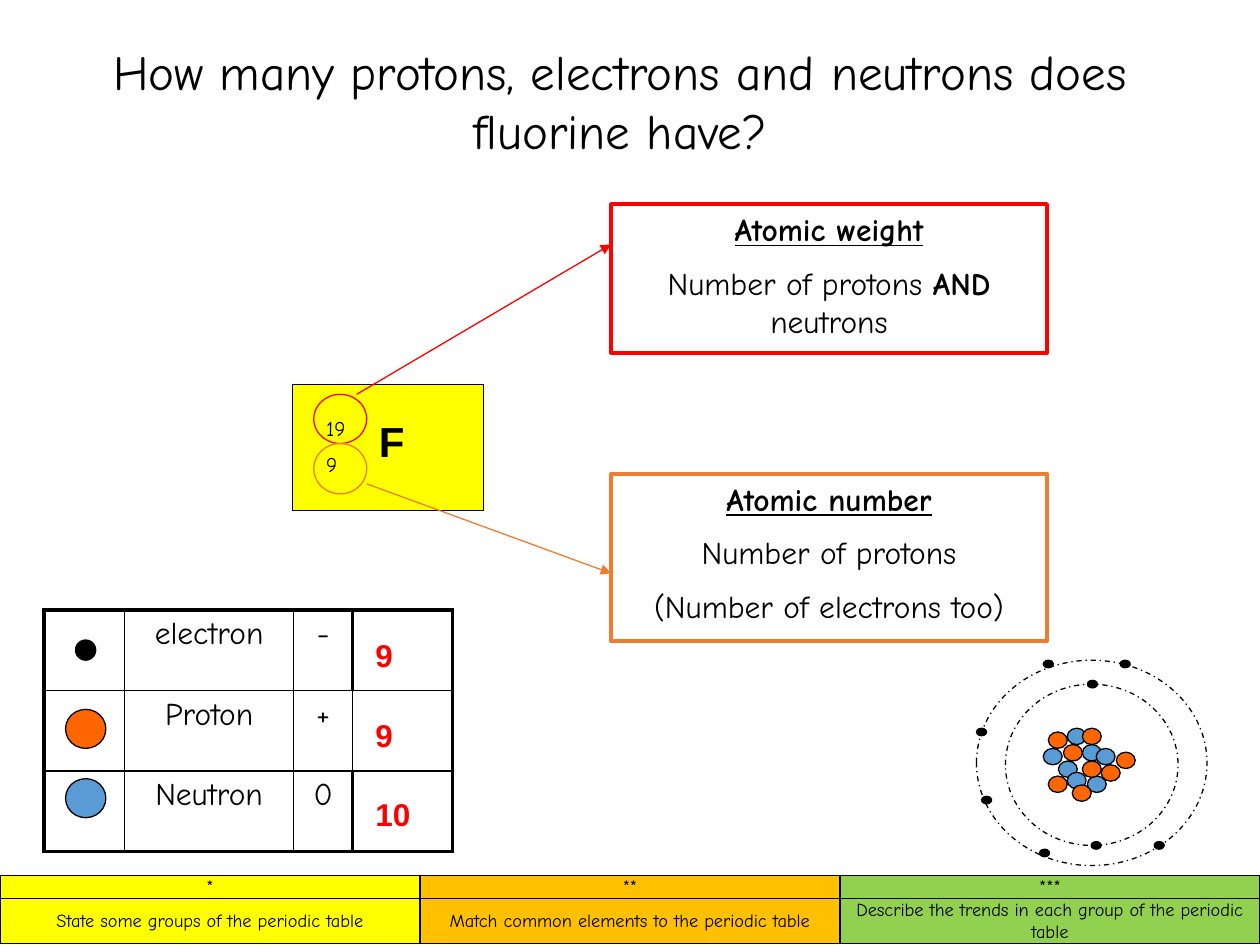
from lxml import etree
from pptx import Presentation
from pptx.dml.color import RGBColor
from pptx.enum.dml import MSO_LINE
from pptx.enum.shapes import MSO_CONNECTOR, MSO_SHAPE
from pptx.enum.text import MSO_ANCHOR, MSO_AUTO_SIZE, PP_ALIGN
from pptx.oxml.ns import qn
from pptx.util import Inches, Pt

RECT, OVAL = MSO_SHAPE.RECTANGLE, MSO_SHAPE.OVAL
STRAIGHT, DASH = MSO_CONNECTOR.STRAIGHT, MSO_LINE.DASH_DOT
LEFT, CENTER = PP_ALIGN.LEFT, PP_ALIGN.CENTER
TOP, MIDDLE = MSO_ANCHOR.TOP, MSO_ANCHOR.MIDDLE
FIT = MSO_AUTO_SIZE.SHAPE_TO_FIT_TEXT
BLACK = RGBColor(0, 0, 0)
RED = RGBColor(0xFF, 0, 0)
YELLOW = RGBColor(0xFF, 0xFF, 0)
AMBER = RGBColor(0xFF, 0xC0, 0)
GREEN = RGBColor(0x92, 0xD0, 0x50)
RUST = RGBColor(0xED, 0x7D, 0x31)
ORANGE = RGBColor(0xFF, 0x66, 0)
BLUE = RGBColor(0x5B, 0x9B, 0xD5)
COMIC, ARIAL = "Comic Neue", "Arial"
THIN, THICK = 1, 2.25

GOALS = [
    ("*", "State some groups of the periodic table", YELLOW),
    ("**", "Match common elements to the periodic table", AMBER),
    ("***", "Describe the trends in each group of the periodic table", GREEN),
]
PARTS = [("electron", "-"), ("Proton", "+"), ("Neutron", "0")]
NEUTRONS = [(8.28, 5.94), (8.4, 6.04), (8.47, 5.78), (8.59, 5.91),
            (8.7, 5.94), (8.47, 6.13), (8.63, 6.16)]
PROTONS = [(8.59, 6.04), (8.74, 6.07), (8.32, 6.16), (8.44, 5.91),
           (8.59, 5.78), (8.86, 5.97), (8.32, 5.81), (8.51, 6.23)]
ELECTRONS = [(9.16, 6.68), (8.89, 5.24), (8.28, 5.24), (7.75, 5.78),
             (7.79, 6.32), (8.25, 6.74), (8.66, 6.68), (8.63, 5.4)]


def write(frame, paras, size, font=COMIC, color=BLACK, align=CENTER, gap=50):
    """Fill a frame; each paragraph is a list of (text, bold, underline).

    The gap before a paragraph is a percentage of its line.
    """
    for i, runs in enumerate(paras):
        para = frame.paragraphs[0] if i == 0 else frame.add_paragraph()
        para.alignment = align
        if gap:
            para.space_before = Pt(0)
            before = para._p.pPr.find(qn("a:spcBef"))
            before.clear()
            etree.SubElement(before, qn("a:spcPct"), val=str(gap * 1000))
        for text, bold, under in runs:
            run = para.add_run()
            run.text = text
            run.font.size = Pt(size)
            run.font.name = font
            run.font.bold = bold
            run.font.underline = under
            run.font.color.rgb = color


def plain(text, bold=False):
    return [(text, bold, False)]


def add_text(slide, box, paras, size, **style):
    frame = slide.shapes.add_textbox(*map(Inches, box)).text_frame
    frame.word_wrap = True
    frame.auto_size = FIT
    write(frame, paras, size, **style)


def add_form(slide, kind, box, fill=None, line=BLACK, width=0.75):
    form = slide.shapes.add_shape(kind, *map(Inches, box))
    form.shadow.inherit = False
    if fill is None:
        form.fill.background()
    else:
        form.fill.solid()
        form.fill.fore_color.rgb = fill
    form.line.color.rgb = line
    form.line.width = Pt(width)
    return form


def add_note(slide, box, color, paras):
    frame = add_form(slide, RECT, box, line=color, width=THICK).text_frame
    frame.word_wrap = True
    frame.auto_size = FIT
    frame.vertical_anchor = TOP
    write(frame, paras, 18)


def add_arrow(slide, start, end, color):
    arrow = slide.shapes.add_connector(
        STRAIGHT, *map(Inches, start), *map(Inches, end))
    arrow.line.color.rgb = color
    arrow.line.width = Pt(0.75)
    etree.SubElement(arrow.line._get_or_add_ln(), qn("a:tailEnd"),
                     type="triangle")
    etree.SubElement(arrow._element.spPr, qn("a:effectLst"))


def add_grid(slide, box, cols, rows):
    grid = slide.shapes.add_table(
        len(rows), len(cols), *map(Inches, box)).table
    grid.first_row = grid.horz_banding = False
    for col, width in zip(grid.columns, cols):
        col.width = Inches(width)
    for row, height in zip(grid.rows, rows):
        row.height = Inches(height)
    return grid


def set_edges(cell, left=THIN, right=THIN, top=THIN, bottom=THIN):
    props = cell._tc.get_or_add_tcPr()
    sides = [("L", left), ("R", right), ("T", top), ("B", bottom)]
    for i, (side, width) in enumerate(sides):
        edge = etree.Element(qn("a:ln" + side), w=str(int(Pt(width))))
        fill = etree.SubElement(edge, qn("a:solidFill"))
        etree.SubElement(fill, qn("a:srgbClr"), val=str(BLACK))
        props.insert(i, edge)


def add_goals(slide):
    grid = add_grid(slide, (0, 6.95, 10, 0.54), [10 / 3] * 3, [0.18, 0.36])
    for x, (stars, goal, color) in enumerate(GOALS):
        for y, text in enumerate((stars, goal)):
            cell = grid.cell(y, x)
            cell.fill.solid()
            cell.fill.fore_color.rgb = color
            cell.vertical_anchor = MIDDLE
            cell.margin_left = cell.margin_right = Inches(0.07)
            cell.margin_top = cell.margin_bottom = 0
            write(cell.text_frame, [plain(text)], 10.5, gap=0)
            cell.text_frame.paragraphs[0].line_spacing = 1.07
            set_edges(cell)


def add_parts(slide):
    grid = add_grid(slide, (0.35, 4.84, 3.24, 1.93),
                    [0.64, 1.34, 0.47, 0.79], [0.64] * 3)
    for y, (name, charge) in enumerate(PARTS):
        split = THIN if y == 1 else THICK
        walls = [THICK, THIN, THIN, split, THICK]
        for x, text in enumerate(("", name, charge, "")):
            cell = grid.cell(y, x)
            cell.fill.background()
            if text:
                write(cell.text_frame, [plain(text)], 18, gap=20)
            set_edges(cell, walls[x], walls[x + 1],
                      THICK if y == 0 else THIN, THICK if y == 2 else THIN)
    add_form(slide, OVAL, (0.6, 5.08, 0.16, 0.16), BLACK)
    add_form(slide, OVAL, (0.52, 6.18, 0.32, 0.31), BLUE)
    add_form(slide, OVAL, (0.52, 5.63, 0.32, 0.31), ORANGE)
    for i, count in enumerate(("9", "9", "10")):
        add_text(slide, (2.88, 5 + 0.63 * i, 0.55 if i == 2 else 0.39, 0.4),
                 [plain(count, True)], 18, font=ARIAL, color=RED, align=LEFT)


def add_symbol(slide):
    add_form(slide, RECT, (2.32, 3.05, 1.52, 1), YELLOW)
    add_text(slide, (2.49, 3.25, 0.59, 0.6), [plain("19"), plain("9")], 12,
             align=LEFT)
    add_text(slide, (2.91, 3.25, 0.84, 0.5), [plain("F", True)], 24,
             font=ARIAL, align=LEFT)
    add_note(slide, (4.85, 1.62, 3.46, 1.18), RED, [
        [("Atomic weight", True, True)],
        plain("Number of protons ") + plain("AND", True) + plain(" neutrons"),
    ])
    add_form(slide, OVAL, (2.49, 3.13, 0.42, 0.39), line=RED)
    add_arrow(slide, (2.83, 3.13), (4.85, 1.94), RED)
    add_form(slide, OVAL, (2.49, 3.52, 0.42, 0.4), line=RUST)
    add_arrow(slide, (2.91, 3.84), (4.85, 4.55), RUST)
    add_note(slide, (4.85, 3.76, 3.46, 1.33), RUST, [
        [("Atomic number", True, True)],
        plain("Number of protons"),
        plain("(Number of electrons too)"),
    ])


def add_atom(slide):
    for spots, size, color in ((NEUTRONS, (0.15, 0.13), BLUE),
                               (PROTONS, (0.15, 0.13), ORANGE),
                               (ELECTRONS, (0.08, 0.06), BLACK)):
        for spot in spots:
            add_form(slide, OVAL, spot + size, color)
    for shell in ((7.98, 5.43, 1.37, 1.28), (7.75, 5.24, 1.83, 1.63)):
        add_form(slide, OVAL, shell).line.dash_style = DASH


def main():
    deck = Presentation()
    deck.slide_width, deck.slide_height = Inches(10), Inches(7.5)
    slide = deck.slides.add_slide(deck.slide_layouts[6])
    add_goals(slide)
    add_text(slide, (0.43, 0.28, 8.98, 1.03), [plain(
        "How many protons, electrons and neutrons does fluorine have?")], 28)
    add_symbol(slide)
    add_parts(slide)
    add_atom(slide)
    deck.save("out.pptx")


if __name__ == "__main__":
    main()
